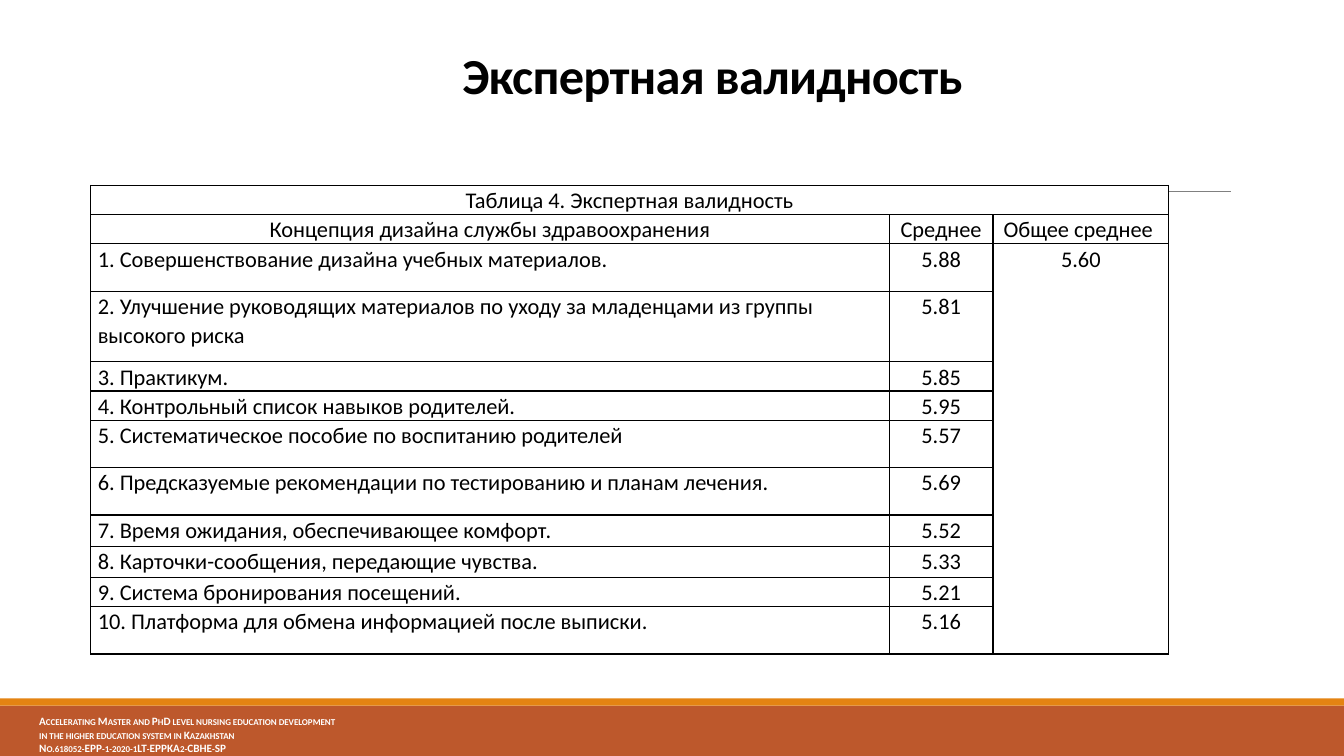
from lxml import etree
from pptx import Presentation
from pptx import util as u
from pptx.dml.color import RGBColor
from pptx.enum import shapes, text
from pptx.oxml import ns

WHITE = RGBColor(0xFF, 0xFF, 0xFF)
BLACK = RGBColor(0, 0, 0)
GRAY = RGBColor(0x80, 0x80, 0x80)
RUST = RGBColor(0xBD, 0x58, 0x2C)
ORANGE = RGBColor(0xE4, 0x83, 0x12)

FOOTER = [
    "Accelerating Master and PhD level nursing education development",
    "in the higher education system in Kazakhstan",
    "No.618052-EPP-1-2020-1LT-EPPKA2-CBHE-SP",
]
CAPTION = "Таблица 4. Экспертная валидность"
HEADER = ["Концепция дизайна службы здравоохранения", "Среднее", "Общее среднее\u00a0"]
OVERALL_MEAN = "5.60"
CONCEPTS = [  # wording, mean, row height
    ("1. Совершенствование дизайна учебных материалов.", "5.88", 0.47),
    ("2. Улучшение руководящих материалов по уходу за младенцами из группы высокого риска",
     "5.81", 0.7),
    ("3. Практикум.", "5.85", 0.29),
    ("4. Контрольный список навыков родителей.", "5.95", 0.29),
    ("5. Систематическое пособие по воспитанию родителей\u00a0", "5.57", 0.47),
    ("6. Предсказуемые рекомендации по тестированию и планам лечения.", "5.69", 0.47),
    ("7. Время ожидания, обеспечивающее комфорт.", "5.52", 0.31),
    ("8. Карточки-сообщения, передающие чувства.", "5.33", 0.31),
    ("9. Система бронирования посещений.", "5.21", 0.29),
    ("10. Платформа для обмена информацией после выписки.", "5.16", 0.47),
]


class SlideBuilder:
    font_name = "Calibri"

    def __init__(self, slide):
        self.slide = slide

    def style(self, paragraph, size, color, bold=False, **attributes):
        font = paragraph.font
        font.name, font.size, font.bold = self.font_name, u.Pt(size), bold
        font.color.rgb = color
        properties = paragraph._p.pPr.find(ns.qn("a:defRPr"))
        for name, value in attributes.items():
            properties.set(name, value)

    def title(self, wording, *box):
        shape = self.slide.shapes.title
        shape.left, shape.top, shape.width, shape.height = map(u.Inches, box)
        frame = shape.text_frame
        frame.text = wording
        frame.auto_size = text.MSO_AUTO_SIZE.NONE
        frame.vertical_anchor = text.MSO_ANCHOR.BOTTOM
        paragraph = frame.paragraphs[0]
        paragraph.alignment = text.PP_ALIGN.CENTER
        paragraph.line_spacing = 0.85
        self.style(paragraph, 36, BLACK, bold=True, spc="-50")

    def bar(self, color, *box):
        shape = self.slide.shapes.add_shape(
            shapes.MSO_SHAPE.RECTANGLE, *map(u.Inches, box))
        shape.shadow.inherit = False
        shape.fill.solid()
        shape.fill.fore_color.rgb = color
        shape.line.fill.background()

    def rule(self, color, width, *ends):
        connector = self.slide.shapes.add_connector(
            shapes.MSO_CONNECTOR.STRAIGHT, *map(u.Inches, ends))
        connector.line.color.rgb = color
        connector.line.width = u.Pt(width)
        etree.SubElement(connector._element.spPr, ns.qn("a:effectLst"))

    def small_caps(self, lines, *box):
        frame = self.slide.shapes.add_textbox(*map(u.Inches, box)).text_frame
        frame.word_wrap = True
        frame.margin_top = u.Inches(0.19)
        frame.text = "\n".join(lines)
        for paragraph in frame.paragraphs:
            self.style(paragraph, 8, WHITE, bold=True, cap="small")

    def table(self, left, top, widths, heights):
        box = map(u.Inches, (left, top, sum(widths), sum(heights)))
        table = self.slide.shapes.add_table(len(heights), len(widths), *box).table
        for column, width in zip(table.columns, widths):
            column.width = u.Inches(width)
        for row, height in zip(table.rows, heights):
            row.height = u.Inches(height)
        for cell in table.iter_cells():
            self.cell_frame(cell)
        return table

    def cell_frame(self, cell):
        cell.margin_left = cell.margin_right = u.Inches(0.07)
        cell.margin_top = cell.margin_bottom = 0
        properties = cell._tc.get_or_add_tcPr()
        for side in ("a:lnL", "a:lnR", "a:lnT", "a:lnB"):
            line = etree.SubElement(properties, ns.qn(side), w=str(u.Pt(1)))
            fill = etree.SubElement(line, ns.qn("a:solidFill"))
            etree.SubElement(fill, ns.qn("a:srgbClr"), val=str(BLACK))
        cell.fill.solid()
        cell.fill.fore_color.rgb = WHITE

    def cell_text(self, cell, wording, alignment=text.PP_ALIGN.CENTER):
        cell.text = wording
        paragraph = cell.text_frame.paragraphs[0]
        paragraph.alignment = alignment
        paragraph.line_spacing = 1.07
        self.style(paragraph, 16, BLACK)


def main():
    presentation = Presentation()
    presentation.slide_width = u.Inches(13.33)
    presentation.slide_height = u.Inches(7.5)
    slide = presentation.slides.add_slide(presentation.slide_layouts[5])
    builder = SlideBuilder(slide)

    # Footer band and rule
    builder.bar(RUST, 0, 7, 13.33, 0.5)
    builder.bar(ORANGE, 0, 6.93, 13.33, 0.07)
    builder.rule(GRAY, 0.5, 1.31, 1.9, 12.21, 1.9)
    builder.small_caps(FOOTER, 0.29, 6.9, 4.59, 0.7)

    # Title
    builder.title("Экспертная валидность", 0.9, 0.4, 12.33, 0.69)

    # Table of expert ratings
    heights = [0.29, 0.29] + [height for _, _, height in CONCEPTS]
    table = builder.table(0.9, 1.84, [7.92, 1.03, 1.74], heights)
    table.cell(0, 0).merge(table.cell(0, 2))
    table.cell(2, 2).merge(table.cell(len(heights) - 1, 2))
    builder.cell_text(table.cell(0, 0), CAPTION)
    for column, heading in enumerate(HEADER):
        builder.cell_text(table.cell(1, column), heading)
    for row, (concept, mean, _) in enumerate(CONCEPTS, start=2):
        builder.cell_text(table.cell(row, 0), concept, text.PP_ALIGN.LEFT)
        builder.cell_text(table.cell(row, 1), mean)
    builder.cell_text(table.cell(2, 2), OVERALL_MEAN)

    presentation.save("out.pptx")


if __name__ == "__main__":
    main()
